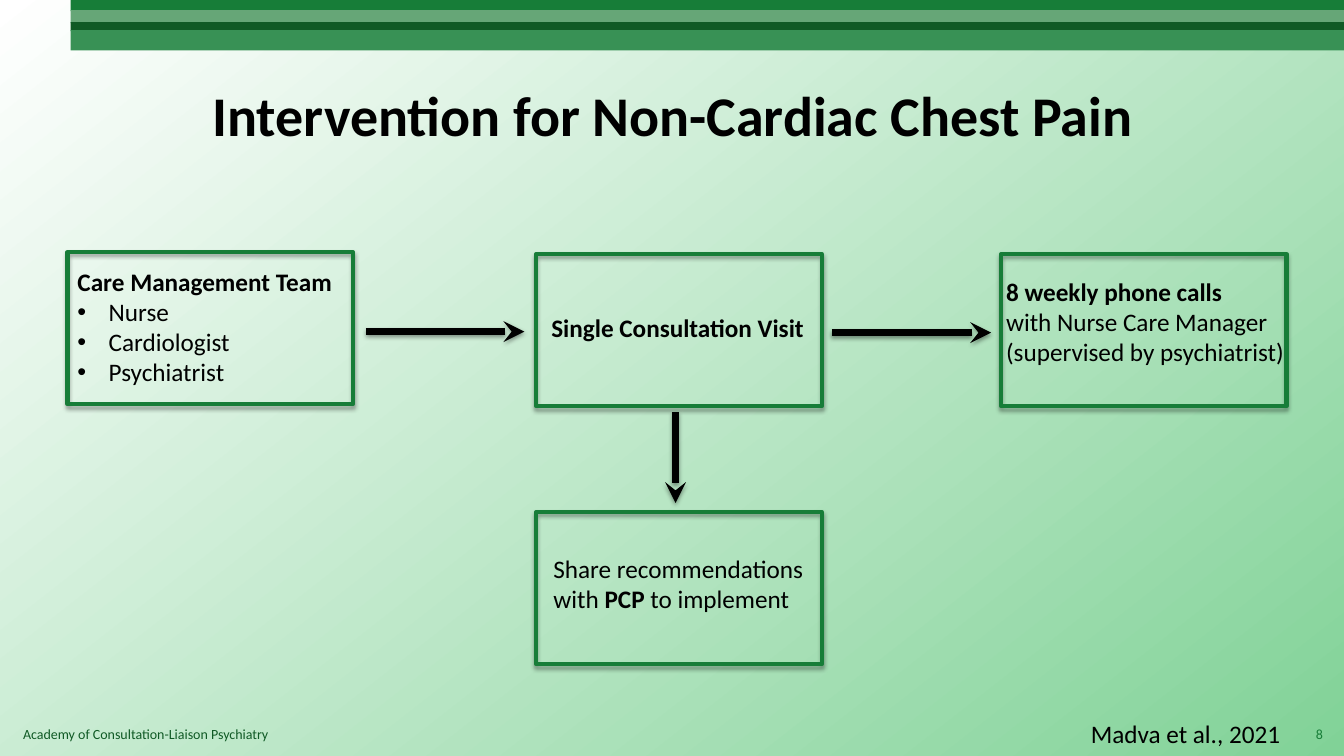
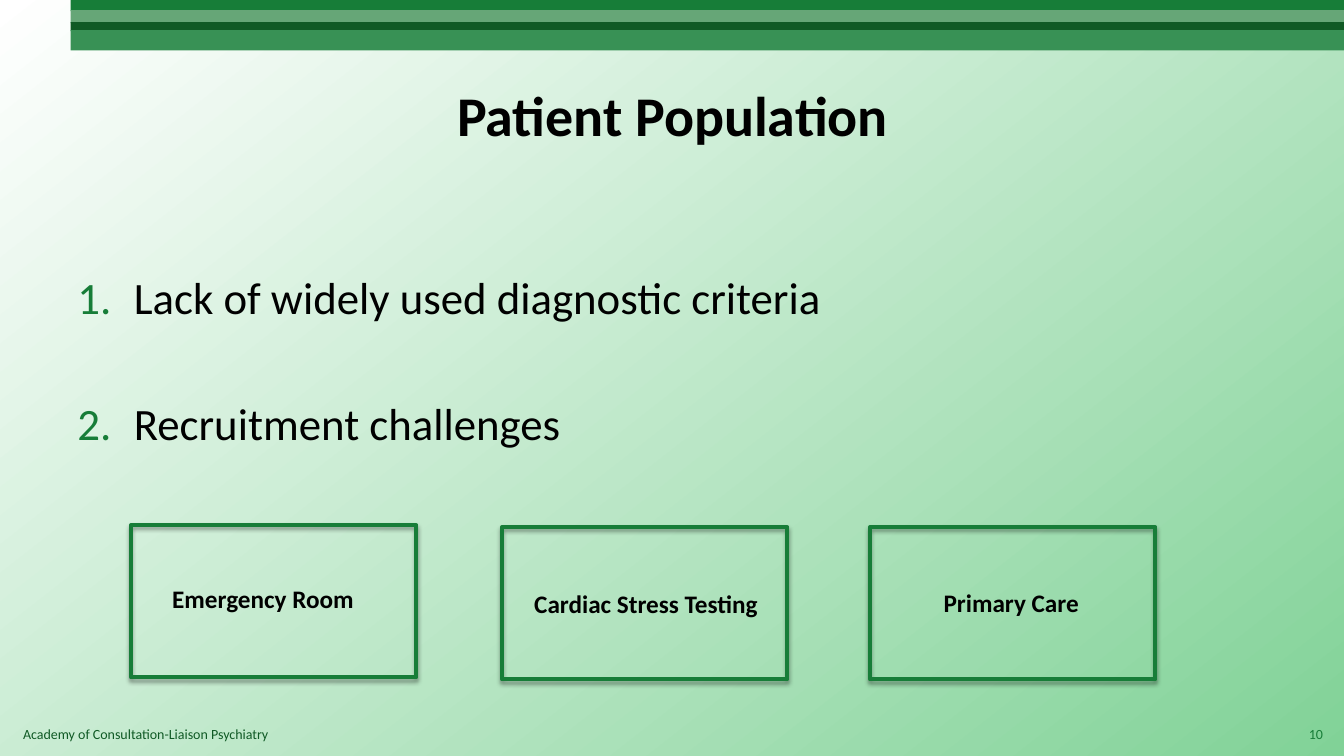
from dataclasses import dataclass

from lxml import etree
from pptx import Presentation
from pptx.dml.color import RGBColor
from pptx.enum.shapes import MSO_CONNECTOR, MSO_SHAPE
from pptx.enum.text import MSO_ANCHOR, PP_ALIGN
from pptx.oxml import parse_xml
from pptx.oxml.ns import nsdecls, qn
from pptx.util import Inches, Pt

RECTANGLE = MSO_SHAPE.RECTANGLE
STRAIGHT = MSO_CONNECTOR.STRAIGHT
LEFT, CENTER, RIGHT = PP_ALIGN.LEFT, PP_ALIGN.CENTER, PP_ALIGN.RIGHT
TOP, MIDDLE = MSO_ANCHOR.TOP, MSO_ANCHOR.MIDDLE
TITLE_ONLY = 5


@dataclass(frozen=True)
class Theme:
    font: str = "Calibri"
    ink: str = "000000"
    paper: str = "FFFFFF"
    mint: str = "81D297"
    green: str = "177D38"
    sage: str = "66A677"
    forest: str = "105A25"
    fern: str = "389155"
    title_size: int = 40
    list_size: int = 32
    body_size: int = 18
    footer_size: int = 10


THEME = Theme()
SLIDE_WIDTH, SLIDE_HEIGHT = 13.33, 7.5
BAND_LEFT = 0.7
BANDS = [
    (0, 0.11, THEME.green),
    (0.1, 0.13, THEME.sage),
    (0.22, 0.09, THEME.forest),
    (0.3, 0.2, THEME.fern),
]
BOX_WIDTH, BOX_HEIGHT = 2.83, 1.51
LABEL_HEIGHT = 0.4
FOOTER = "Academy of Consultation-Liaison Psychiatry"


def rgb(value):
    return RGBColor.from_string(value)


def inches(box):
    return [Inches(length) for length in box]


def set_bullet(paragraph, mark, indent, color):
    properties = paragraph._p.get_or_add_pPr()
    properties.set("marL", str(Inches(indent)))
    properties.set("indent", str(-Inches(indent)))
    bullet_color = etree.SubElement(properties, qn("a:buClr"))
    etree.SubElement(bullet_color, qn("a:srgbClr"), val=color)
    if mark == "number":
        etree.SubElement(properties, qn("a:buAutoNum"), type="arabicPeriod")
    else:
        etree.SubElement(properties, qn("a:buFont"), typeface="Arial")
        etree.SubElement(properties, qn("a:buChar"), char=mark)


def write(frame, text, *, size=THEME.body_size, color=THEME.ink, bold=False,
          align=LEFT, bullet=None, indent=0.31, bullet_color=THEME.ink,
          space_before=0):
    paragraph = frame.add_paragraph() if frame.text else frame.paragraphs[0]
    if bullet:
        set_bullet(paragraph, bullet, indent, bullet_color)
    paragraph.alignment = align
    paragraph.space_before = Pt(space_before)
    runs = [(text, bold)] if isinstance(text, str) else text
    for words, is_bold in runs:
        run = paragraph.add_run()
        run.text = words
        run.font.name = THEME.font
        run.font.size = Pt(size)
        run.font.bold = is_bold
        run.font.color.rgb = rgb(color)


def add_frame(shapes, box, anchor=TOP):
    frame = shapes.add_textbox(*inches(box)).text_frame
    frame.word_wrap = True
    frame.vertical_anchor = anchor
    return frame


def add_shadow(shape, opacity, distance):
    shape.element.spPr.append(parse_xml(
        f'<a:effectLst {nsdecls("a")}>'
        f'<a:outerShdw blurRad="{Pt(3.1)}" dist="{Pt(distance)}" '
        f'dir="5400000" rotWithShape="0"><a:srgbClr val="{THEME.ink}">'
        f'<a:alpha val="{opacity * 1000}"/></a:srgbClr></a:outerShdw>'
        f'</a:effectLst>'))


def add_labelled_box(slide, left, top, label_box):
    shapes = slide.shapes.add_group_shape().shapes
    outline = shapes.add_shape(
        RECTANGLE, *inches((left, top, BOX_WIDTH, BOX_HEIGHT)))
    outline.fill.background()
    outline.line.color.rgb = rgb(THEME.green)
    outline.line.width = Pt(3)
    add_shadow(outline, 35, 1.8)
    return add_frame(shapes, label_box)


def add_arrow(slide, start, end):
    arrow = slide.shapes.add_connector(STRAIGHT, *inches(start + end))
    arrow.line.color.rgb = rgb(THEME.ink)
    arrow.line.width = Pt(5)
    line = arrow.element.spPr.find(qn("a:ln"))
    etree.SubElement(line, qn("a:tailEnd"), type="stealth")
    add_shadow(arrow, 38, 1.6)


def set_background(prs):
    fill = prs.slide_master.background.fill
    fill.gradient()
    fill.gradient_angle = 360 - 52
    for stop, color in zip(fill.gradient_stops, (THEME.paper, THEME.mint)):
        stop.color.rgb = rgb(color)


def add_slide(prs, heading, number):
    slide = prs.slides.add_slide(prs.slide_layouts[TITLE_ONLY])
    for top, height, color in BANDS:
        band = slide.shapes.add_shape(
            RECTANGLE,
            *inches((BAND_LEFT, top, SLIDE_WIDTH - BAND_LEFT, height)))
        band.shadow.inherit = False
        band.fill.solid()
        band.fill.fore_color.rgb = rgb(color)
        band.line.fill.background()

    title = slide.shapes.title
    title.left, title.top, title.width, title.height = inches(
        (0.67, 0.51, 12, 1.25))
    title.text_frame.vertical_anchor = MIDDLE
    write(title.text_frame, heading, size=THEME.title_size, bold=True,
          align=CENTER)

    write(add_frame(slide.shapes, (0.13, 7.15, 9.25, 0.27)), FOOTER,
          size=THEME.footer_size, color=THEME.forest)
    write(add_frame(slide.shapes, (12.69, 7.08, 0.53, 0.4), MIDDLE),
          str(number), size=THEME.footer_size, color=THEME.green, align=RIGHT)
    return slide


def build_intervention(prs):
    slide = add_slide(prs, "Intervention for Non-Cardiac Chest Pain", 8)

    team = add_labelled_box(slide, 0.67, 2.5, (0.67, 2.59, BOX_WIDTH, 1.31))
    write(team, "Care Management Team", bold=True)
    for member in ("Nurse", "Cardiologist", "Psychiatrist"):
        write(team, member, bullet="•")

    visit = add_labelled_box(
        slide, 5.32, 2.52, (5.37, 3.05, BOX_WIDTH, LABEL_HEIGHT))
    write(visit, "Single Consultation Visit", bold=True)

    calls = add_labelled_box(slide, 9.93, 2.52, (9.88, 2.69, 3.39, 1.01))
    write(calls, "8 weekly phone calls", bold=True)
    write(calls, "with Nurse Care Manager (supervised by psychiatrist)")

    sharing = add_labelled_box(
        slide, 5.32, 5.08, (5.39, 5.44, BOX_WIDTH, 0.71))
    write(sharing, [("Share recommendations with ", False), ("PCP", True),
                    (" to implement", False)])

    add_arrow(slide, (3.63, 3.29), (5.2, 3.29))
    add_arrow(slide, (8.25, 3.3), (9.83, 3.3))
    add_arrow(slide, (6.7, 4.09), (6.7, 4.99))

    write(add_frame(slide.shapes, (10.72, 7.08, 2.59, LABEL_HEIGHT)),
          "Madva et al., 2021")


def build_population(prs):
    slide = add_slide(prs, "Patient Population", 10)

    issues = add_frame(slide.shapes, (0.67, 2.63, 12, 3.01))
    for issue, gap in (("Lack of widely used diagnostic criteria", 0),
                       ("Recruitment challenges", 51)):
        write(issues, issue, size=THEME.list_size, bullet="number",
              indent=0.56, bullet_color=THEME.green, space_before=gap)

    settings = [
        ("Emergency Room", 1.3, 5.21, 1.61, 5.74),
        ("Cardiac Stress Testing", 4.98, 5.23, 5.2, 5.79),
        ("Primary Care", 8.63, 5.23, 9.26, 5.78),
    ]
    for setting, left, top, label_left, label_top in settings:
        label = add_labelled_box(
            slide, left, top,
            (label_left, label_top, BOX_WIDTH, LABEL_HEIGHT))
        write(label, setting, bold=True)


def main():
    prs = Presentation()
    prs.slide_width = Inches(SLIDE_WIDTH)
    prs.slide_height = Inches(SLIDE_HEIGHT)
    set_background(prs)
    build_intervention(prs)
    build_population(prs)
    prs.save("out.pptx")


if __name__ == "__main__":
    main()
